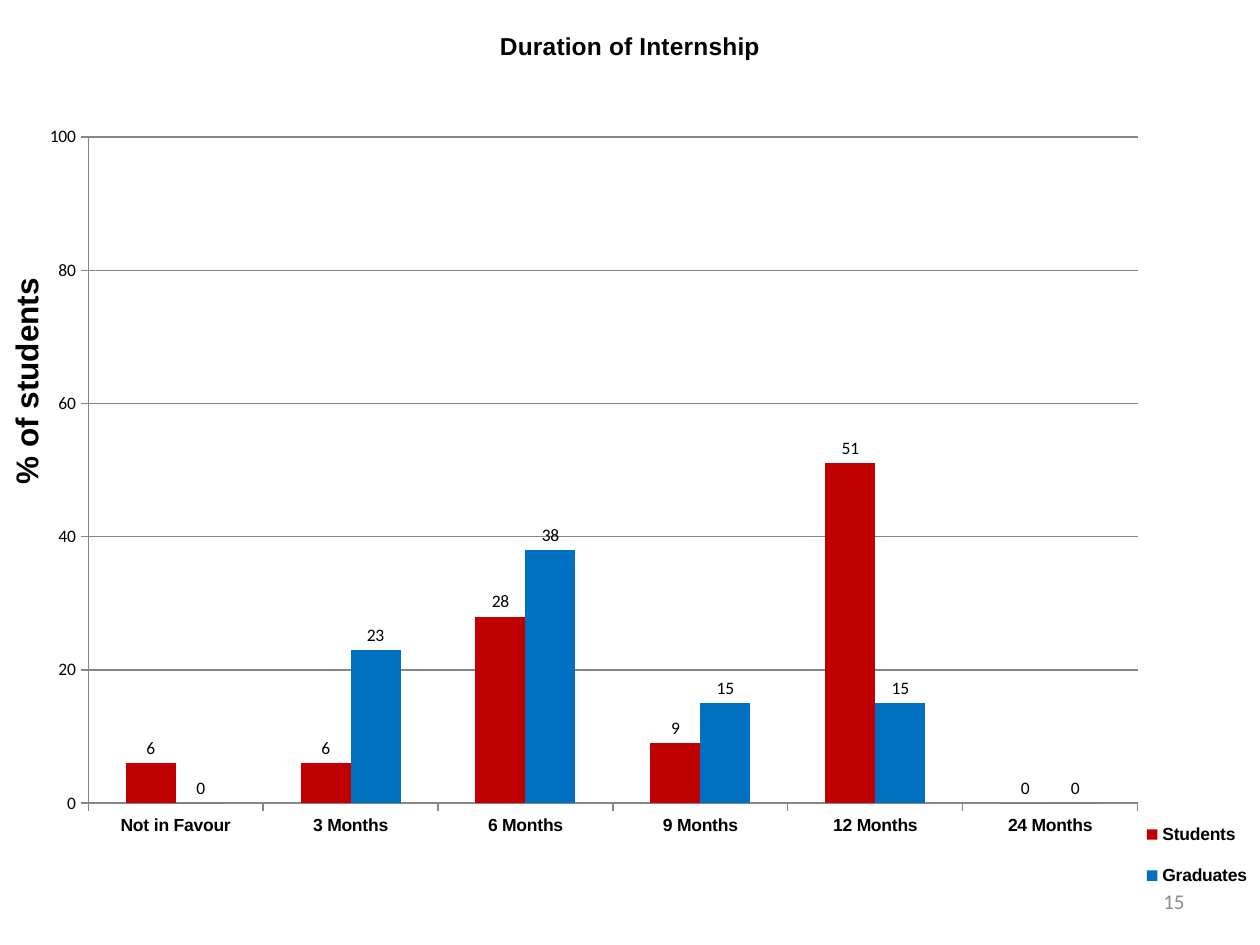
from dataclasses import dataclass

import pptx
import pptx.chart.data
import pptx.dml.color
import pptx.enum.chart
import pptx.enum.text
import pptx.oxml
import pptx.oxml.ns
import pptx.util
from pptx.util import Inches


@dataclass(frozen=True)
class Theme:
    heading: str = "Arial"
    body: str = "Calibri"
    black: str = "000000"
    grey: str = "8C8C8C"
    axis: str = "868686"
    students: str = "C00000"
    graduates: str = "0070C0"
    chart_size: int = 10
    number_size: int = 12
    title_size: int = 14
    label_size: int = 18


THEME = Theme()
CATEGORIES = ["Not in Favour", "3 Months", "6 Months",
              "9 Months", "12 Months", "24 Months"]
SERIES = [
    ("Students", (6, 6, 28, 9, 51, 0), THEME.students),
    ("Graduates", (0, 23, 38, 15, 15, 0), THEME.graduates),
]


def rgb(color):
    return pptx.dml.color.RGBColor.from_string(color)


def set_font(font, name, size, bold=False, color=THEME.black):
    font.name = name
    font.size = pptx.util.Pt(size)
    font.bold = bold
    font.color.rgb = rgb(color)


def manual_layout(x, y, w, h, inner=False):
    """Return a c:layout element in fractions of the chart area."""
    target = '<c:layoutTarget val="inner"/>' if inner else ""
    return pptx.oxml.parse_xml(
        f'<c:layout {pptx.oxml.ns.nsdecls("c")}><c:manualLayout>{target}'
        '<c:xMode val="edge"/><c:yMode val="edge"/>'
        f'<c:x val="{x}"/><c:y val="{y}"/><c:w val="{w}"/><c:h val="{h}"/>'
        '</c:manualLayout></c:layout>')


def drop_layout(element):
    for layout in element.findall(pptx.oxml.ns.qn("c:layout")):
        element.remove(layout)


def style_line(line):
    line.color.rgb = rgb(THEME.axis)
    line.width = pptx.util.Pt(0.75)


def style_axes(chart):
    category, value = chart.category_axis, chart.value_axis
    set_font(category.tick_labels.font, THEME.heading, THEME.chart_size, True)
    set_font(value.tick_labels.font, THEME.body, THEME.chart_size)
    value.minimum_scale, value.maximum_scale = 0, 100
    value.major_unit = 20
    value.has_major_gridlines = True
    style_line(value.major_gridlines.format.line)
    for axis in (category, value):
        axis.major_tick_mark = pptx.enum.chart.XL_TICK_MARK.OUTSIDE
        axis.minor_tick_mark = pptx.enum.chart.XL_TICK_MARK.NONE
        style_line(axis.format.line)


def style_series(plot):
    plot.gap_width = 150
    plot.overlap = 0
    plot.vary_by_categories = False
    for series, (_, _, color) in zip(plot.series, SERIES):
        series.format.fill.solid()
        series.format.fill.fore_color.rgb = rgb(color)
        series.invert_if_negative = False
        labels = series.data_labels
        labels.show_value = True
        labels.position = pptx.enum.chart.XL_LABEL_POSITION.OUTSIDE_END
        set_font(labels.font, THEME.body, THEME.chart_size)


def add_legend(chart):
    chart.has_legend = True
    legend = chart.legend
    legend.position = pptx.enum.chart.XL_LEGEND_POSITION.RIGHT
    legend.include_in_layout = False
    set_font(legend.font, THEME.heading, THEME.chart_size, True)
    element = legend._element
    drop_layout(element)
    overlay = element.find(pptx.oxml.ns.qn("c:overlay"))
    overlay.addprevious(manual_layout(0.9, 0.85, 0.1, 0.11))


def add_internship_chart(s, width, height):
    data = pptx.chart.data.CategoryChartData()
    data.categories = CATEGORIES
    for name, values, _ in SERIES:
        data.add_series(name, values)
    kind = pptx.enum.chart.XL_CHART_TYPE.COLUMN_CLUSTERED
    chart = s.shapes.add_chart(kind, 0, 0, width, height, data).chart
    set_font(chart.font, THEME.body, THEME.chart_size)

    chart.has_title = True
    chart.chart_title.include_in_layout = False
    p = chart.chart_title.text_frame.paragraphs[0]
    p.text = "Duration of Internship"
    set_font(p.font, THEME.heading, THEME.title_size, True)
    set_font(p.runs[0].font, THEME.heading, THEME.title_size, True)

    style_axes(chart)
    style_series(chart.plots[0])
    add_legend(chart)
    plot_area = chart._chartSpace.chart.plotArea
    drop_layout(plot_area)
    plot_area.insert(0, manual_layout(0.07, 0.145, 0.833, 0.705, inner=True))


def add_text(s, text, left, top, width, height):
    sp = s.shapes.add_textbox(*map(Inches, (left, top, width, height)))
    tf = sp.text_frame
    tf.word_wrap = True
    p = tf.paragraphs[0]
    p.text = text
    return sp, p


def main():
    prs = pptx.Presentation()
    prs.slide_width, prs.slide_height = Inches(10), Inches(7.5)
    s = prs.slides.add_slide(prs.slide_layouts[6])
    add_internship_chart(s, prs.slide_width, prs.slide_height)

    sp, p = add_text(s, "% of students", -0.8, 2.74, 2.01, 0.4)
    sp.rotation = 270
    set_font(p.font, THEME.heading, THEME.label_size, True)

    sp, p = add_text(s, "15", 7.17, 6.95, 2.33, 0.4)
    sp.text_frame.vertical_anchor = pptx.enum.text.MSO_ANCHOR.MIDDLE
    p.alignment = pptx.enum.text.PP_ALIGN.RIGHT
    set_font(p.font, THEME.body, THEME.number_size, color=THEME.grey)

    prs.save("out.pptx")


if __name__ == "__main__":
    main()
